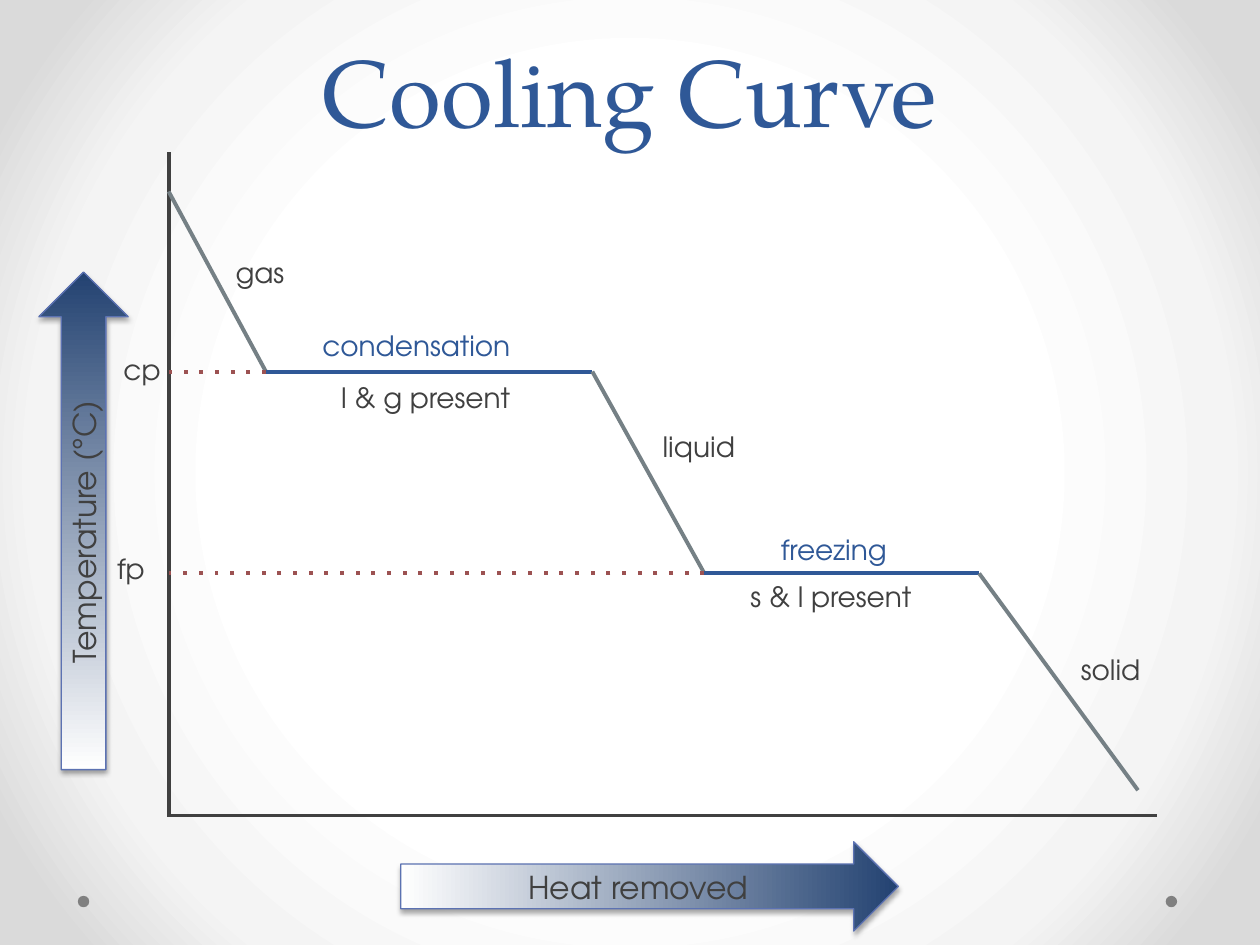
import lxml.etree
import pptx
import pptx.dml.color
import pptx.enum.shapes
import pptx.enum.text
import pptx.oxml
import pptx.oxml.ns
import pptx.util

Cm = pptx.util.Cm
Pt = pptx.util.Pt
RGBColor = pptx.dml.color.RGBColor
SHAPE = pptx.enum.shapes.MSO_SHAPE
ALIGN = pptx.enum.text.PP_ALIGN
ANCHOR = pptx.enum.text.MSO_ANCHOR
qn = pptx.oxml.ns.qn

WHITE = RGBColor(0xFF, 0xFF, 0xFF)
NAVY = RGBColor(0x23, 0x42, 0x71)
BLUE = RGBColor(0x2F, 0x58, 0x97)
EDGE = RGBColor(0x5C, 0x72, 0xB2)
DARK = RGBColor(0x40, 0x40, 0x40)
SLATE = RGBColor(0x75, 0x80, 0x85)
RED = RGBColor(0x9C, 0x52, 0x52)
GRAY = RGBColor(0x80, 0x80, 0x80)
BACKGROUND_STOPS = [(50, WHITE), (76, RGBColor(0xF4, 0xF4, 0xF4)), (92, RGBColor(0xDA, 0xDA, 0xDA))]

TITLE_FONT = {"name": "TeX Gyre Pagella", "size": Pt(54)}
LABEL_FONT = {"name": "TeX Gyre Adventor", "size": Pt(16)}
ARROW_FONT = {"name": "TeX Gyre Adventor", "size": Pt(18)}


def write_text(box, text, font, color, align, anchor):
    frame = box.text_frame
    for name, value in {"word_wrap": True, "vertical_anchor": anchor}.items():
        setattr(frame, name, value)
    para = frame.paragraphs[0]
    para.alignment = align
    span = para.add_run()
    span.text = text
    for name, value in font.items():
        setattr(span.font, name, value)
    span.font.color.rgb = color
    return para


def draw_line(page, start, end, color, dotted=False):
    line = page.shapes.add_connector(
        pptx.enum.shapes.MSO_CONNECTOR.STRAIGHT, *[Cm(value) for value in start + end]
    )
    line.line.width = Pt(2.25)
    line.line.color.rgb = color
    properties = line.element.spPr
    if dotted:
        outline = properties.find(qn("a:ln"))
        lxml.etree.SubElement(outline, qn("a:prstDash")).set("val", "dot")
    lxml.etree.SubElement(properties, qn("a:effectLst"))


deck = pptx.Presentation()
deck.slide_width = Cm(25.4)
deck.slide_height = Cm(19.05)
page = deck.slides.add_slide(deck.slide_layouts[6])

page.background.fill.gradient()
gradient = page.element.find(".//" + qn("a:gradFill"))
for child in list(gradient):
    gradient.remove(child)
stops = lxml.etree.SubElement(gradient, qn("a:gsLst"))
for position, color in BACKGROUND_STOPS:
    stop = lxml.etree.SubElement(stops, qn("a:gs"))
    stop.set("pos", str(position * 1000))
    lxml.etree.SubElement(stop, qn("a:srgbClr")).set("val", str(color))
circle = lxml.etree.SubElement(gradient, qn("a:path"))
circle.set("path", "circle")
center = lxml.etree.SubElement(circle, qn("a:fillToRect"))
for side in "ltrb":
    center.set(side, "50000")

for left in (23.5, 1.57):
    dot = page.shapes.add_shape(SHAPE.OVAL, Cm(left), Cm(18.06), Cm(0.23), Cm(0.23))
    dot.shadow.inherit = False
    dot.fill.solid()
    dot.fill.fore_color.rgb = GRAY
    dot.line.fill.background()

title = page.shapes.add_textbox(Cm(1.27), Cm(0), Cm(22.86), Cm(3.07))
para = write_text(title, "Cooling Curve", TITLE_FONT, BLUE, ALIGN.CENTER, ANCHOR.BOTTOM)
para.line_spacing = Pt(58)

axis_x, axis_y = 3.4, 16.44
draw_line(page, (axis_x, 3.07), (axis_x, axis_y), DARK)
draw_line(page, (23.32, axis_y), (axis_x - 0.03, axis_y), DARK)

for text, left, top, turn in [
    ("Heat removed", 8.08, 16.97, 0),
    ("Temperature (°C)", -3.33, 9.6, 270),
]:
    arrow = page.shapes.add_shape(SHAPE.RIGHT_ARROW, Cm(left), Cm(top), Cm(10.03), Cm(1.8))
    arrow.rotation = turn
    arrow.fill.gradient()
    arrow.fill.gradient_angle = 0
    for stop, color in zip(arrow.fill.gradient_stops, (WHITE, NAVY)):
        stop.color.rgb = color
    arrow.line.color.rgb = EDGE
    arrow.line.width = Pt(0.75)
    arrow.shadow.inherit = False
    effects = arrow.element.spPr.find(qn("a:effectLst"))
    shadow = lxml.etree.SubElement(effects, qn("a:outerShdw"))
    shadow_format = {"blurRad": Pt(3.1), "dist": Pt(1.8), "dir": 5400000, "rotWithShape": 0}
    for name, value in shadow_format.items():
        shadow.set(name, str(int(value)))
    shade = lxml.etree.SubElement(shadow, qn("a:srgbClr"))
    shade.set("val", "000000")
    lxml.etree.SubElement(shade, qn("a:alpha")).set("val", "35000")
    write_text(arrow, text, ARROW_FONT, DARK, ALIGN.CENTER, ANCHOR.MIDDLE)

condensing_y, freezing_y = 7.49, 11.56
curve = [
    (axis_x, 3.86),
    (5.36, condensing_y),
    (11.94, condensing_y),
    (14.2, freezing_y),
    (19.74, freezing_y),
    (22.94, 15.93),
]
for start, end in zip(curve, curve[1:]):
    draw_line(page, start, end, BLUE if start[1] == end[1] else SLATE)
for start in (curve[1], curve[3]):
    draw_line(page, start, (axis_x, start[1]), RED, dotted=True)

for text, left, top, width, color in [
    ("s & l present", 14.88, 11.56, 4.17, DARK),
    ("l & g present", 6.63, 7.54, 4.17, DARK),
    ("solid", 21.54, 13.03, 1.7, DARK),
    ("freezing", 15.49, 10.62, 2.92, BLUE),
    ("liquid", 13.11, 8.53, 2.18, DARK),
    ("condensation", 6.25, 6.5, 4.55, BLUE),
    ("gas", 4.5, 5.03, 1.7, DARK),
    ("fp", 2.11, 11, 1.65, DARK),
    ("cp", 2.24, 6.99, 1.65, DARK),
]:
    label = page.shapes.add_textbox(Cm(left), Cm(top), Cm(width), Cm(0.94))
    label.text_frame.margin_right = Cm(0)
    write_text(label, text, LABEL_FONT, color, ALIGN.LEFT, ANCHOR.TOP)

deck.save("out.pptx")
